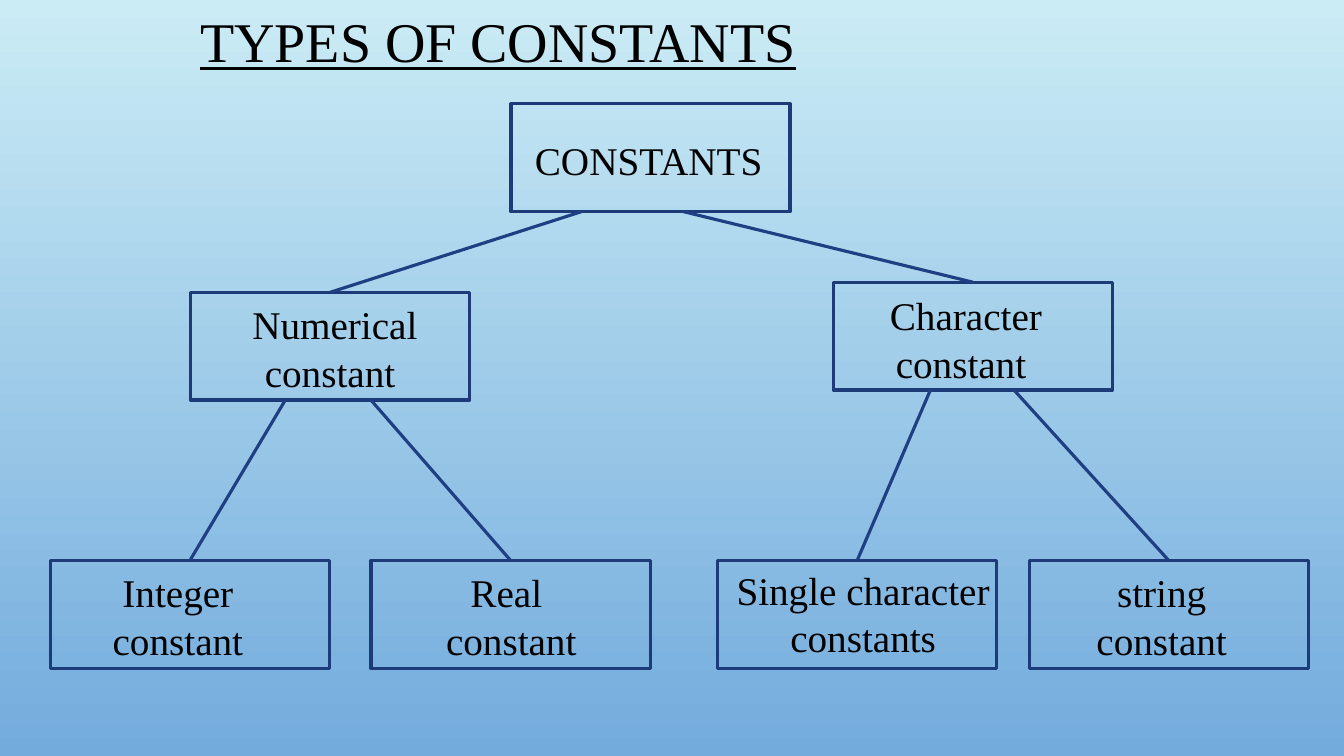
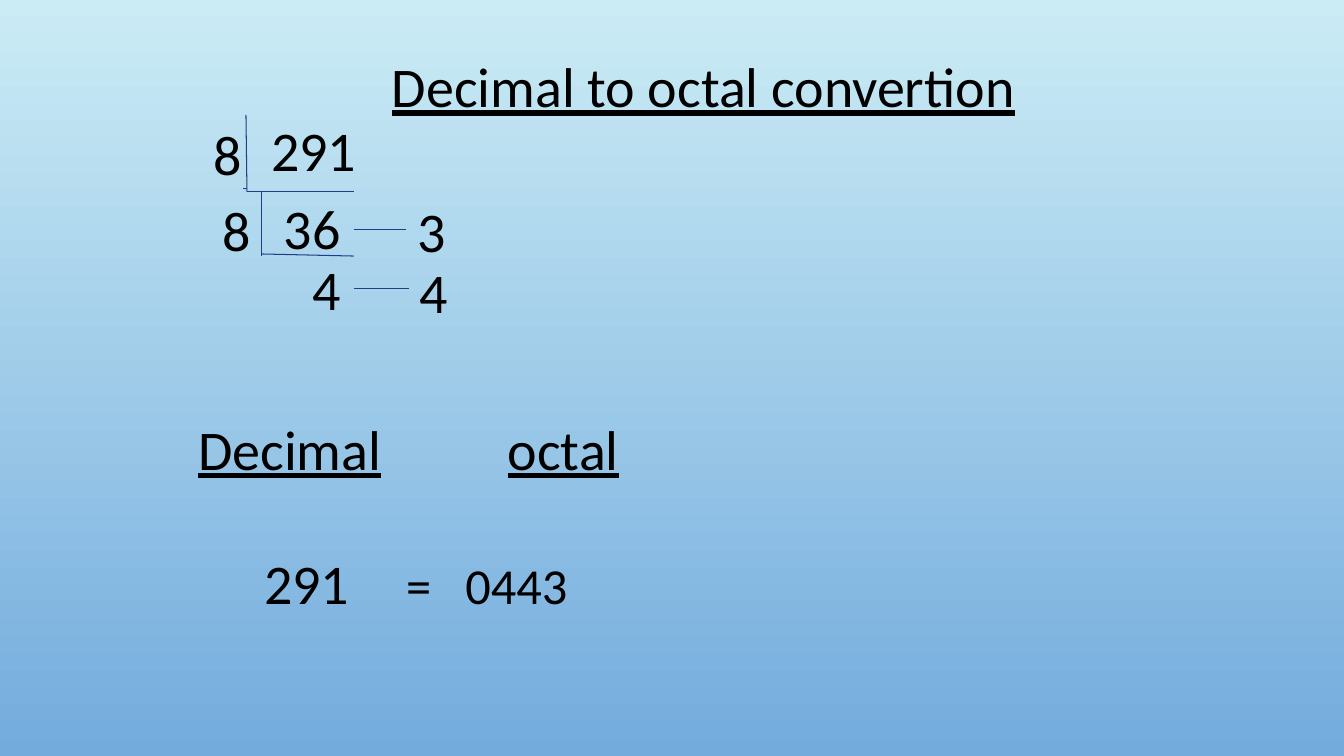
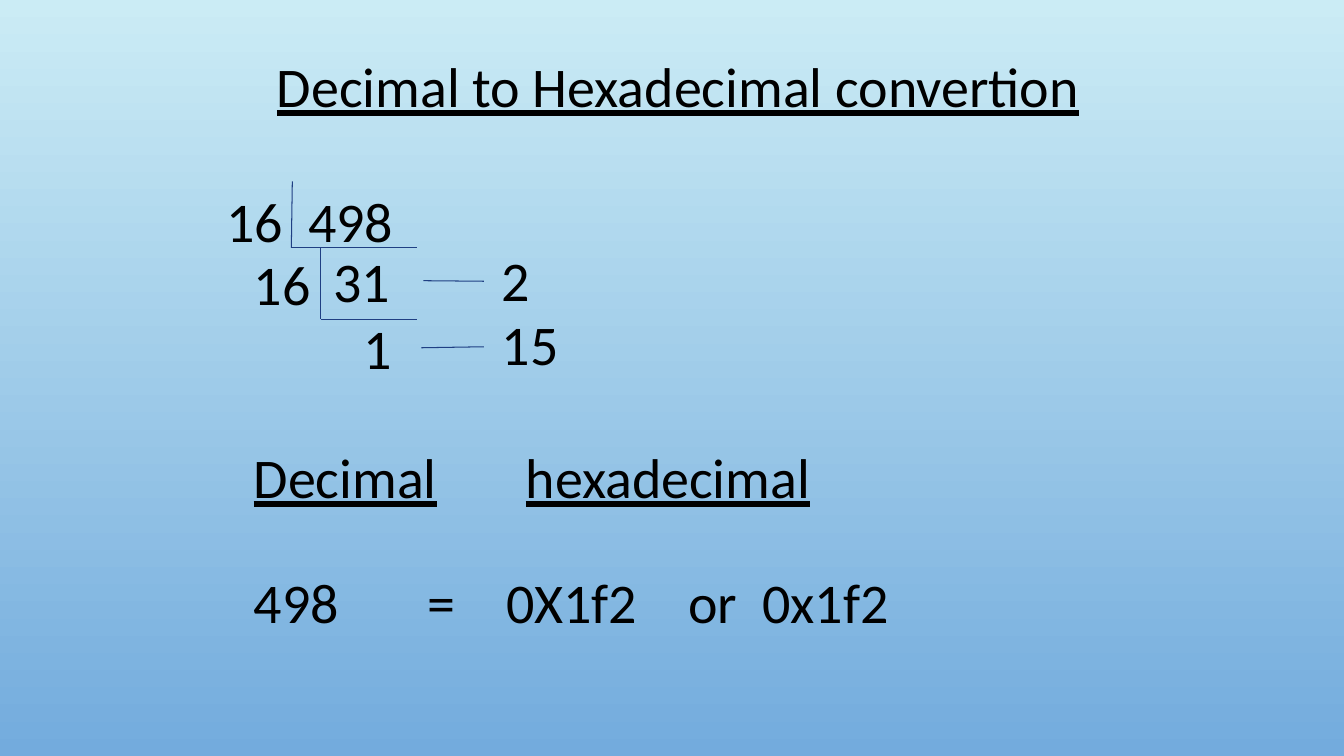
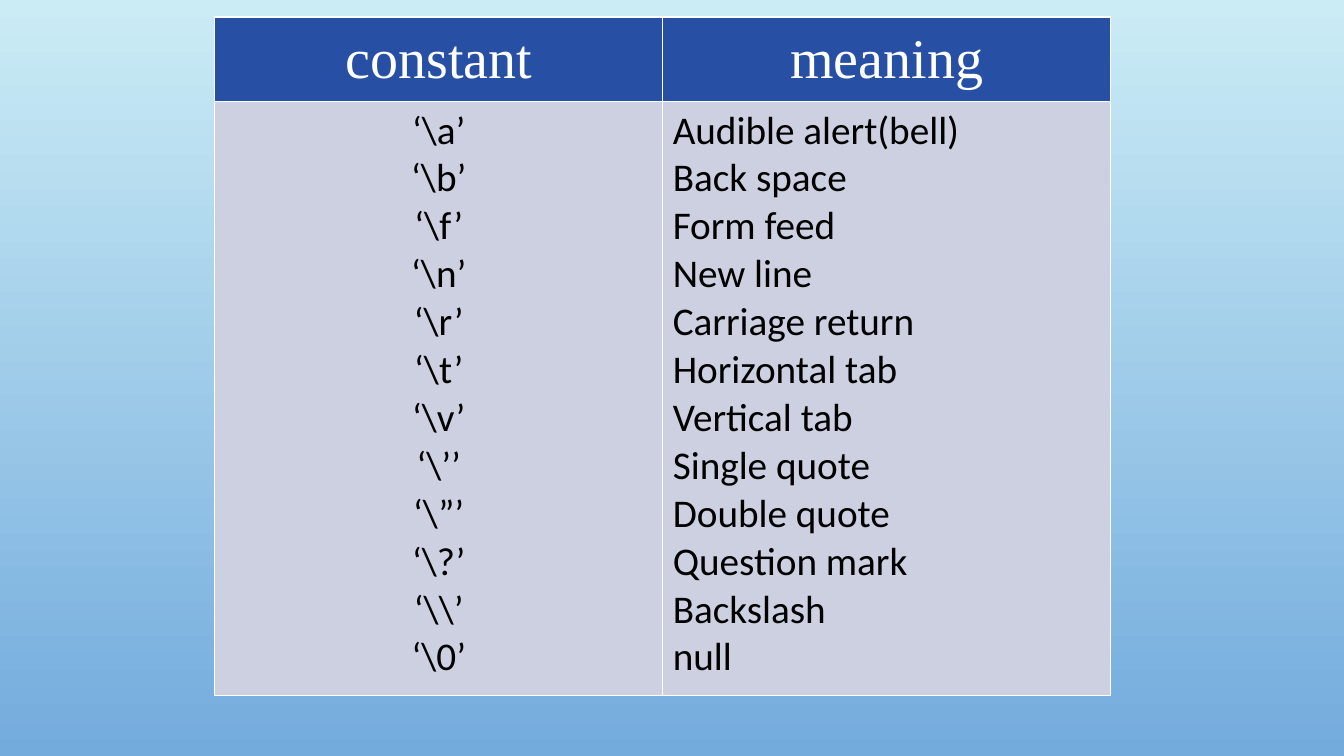
"""Build four slides on the types of constants in C."""
import pptx
import pptx.dml.color
import pptx.enum.dml
import pptx.enum.shapes
import pptx.enum.text
import pptx.util
from lxml import etree
from pptx.oxml.ns import qn

Pt = pptx.util.Pt
RGBColor = pptx.dml.color.RGBColor
Align = pptx.enum.text.PP_ALIGN

SKY_TOP = RGBColor(0xCB, 0xEC, 0xF5)
SKY_BOTTOM = RGBColor(0x73, 0xAB, 0xDD)
BOX_EDGE = RGBColor(0x1D, 0x3A, 0x79)
LINE = RGBColor(0x1F, 0x3F, 0x83)
HEADER = RGBColor(0x27, 0x4F, 0xA4)
BODY = RGBColor(0xCD, 0xD0, 0xE0)
BLACK = RGBColor(0, 0, 0)
WHITE = RGBColor(0xFF, 0xFF, 0xFF)

SANS = "Calibri"
SERIF = "Times New Roman"
SERIF_LEADING = 1.22
LARGE = 40
MEDIUM = 28
ROW_HEIGHT = 55.4

TREE_TITLE = ("TYPES OF CONSTANTS", 136, 0, 725)
NODE_WIDTH, NODE_HEIGHT = 199.4, 77
LEAF_TOP = 400.3
# name: left, top, text shift right, text shift down, (line, indent) pairs
NODES = {
    "root": (365, 74.2, -1.4, 1.5, [("CONSTANTS", 0)]),
    "numerical": (136.1, 208.8, 0, 1, [("Numerical", 7), ("constant", 0)]),
    "character": (595.4, 201.6, -8.6, 1.8, [("Character", 7), ("constant", 0)]),
    "integer": (36, LEAF_TOP, -8.6, 1, [("Integer", 0), ("constant", 0)]),
    "real": (265, LEAF_TOP, -3, 1, [("Real", 0), ("constant", 7)]),
    "single": (512.6, LEAF_TOP, 4.3, -1, [("Single character", 0), ("constants", 0)]),
    "string": (735.1, LEAF_TOP, -5, 1, [("string", 0), ("constant", 0)]),
}
BRANCHES = [
    ("root", 415.4, "numerical"),
    ("root", 488.2, "character"),
    ("numerical", 203.8, "integer"),
    ("numerical", 265, "real"),
    ("character", 664.6, "single"),
    ("character", 724.3, "string"),
]

CONVERSIONS = [
    {
        "title": ("Decimal to octal convertion", 272.9, 33.1, 467),
        "digits": [
            ("8", 145.4, 82.1, 27.4), ("291", 186.5, 79.2, 90),
            ("8", 151.9, 136.1, 27.4), ("36", 195.8, 134.6, 69),
            ("3", 290.9, 136.8, 27.4),
            ("4", 216, 178.6, 27.4), ("4", 292.3, 180.7, 27.4),
        ],
        "rules": [
            (175.7, 82.1, 176.4, 136.8), (176.4, 134.6, 173.5, 134.6),
            (176.4, 136.8, 252.7, 136.8), (252.7, 164.2, 290.2, 164.2),
            (186.5, 137.5, 186.5, 182.9), (186.5, 181.4, 252.7, 182.9),
            (252.7, 205.9, 292.3, 205.9),
        ],
        "headings": (["Decimal", "octal"], 134.6, 292.3, 468, [221.1]),
        "result": (["291", "=", "0443"], 181.6, 388.1, 432, [101.5, 143.8]),
        "answer_size": 36,
    },
    {
        "title": ("Decimal to Hexadecimal convertion", 190.8, 33.1, 648),
        "digits": [
            ("16", 154.8, 129.6, 62), ("498", 213.1, 129.6, 97),
            ("16", 174.2, 175, 62), ("31", 231.2, 172.8, 71),
            ("2", 351.4, 172.1, 62),
            ("1", 252.9, 220.3, 48), ("15", 351.4, 217.4, 62),
        ],
        "rules": [
            (208.8, 129.6, 208.1, 177.1), (208.1, 177.1, 298.1, 177.1),
            (229, 177.1, 229, 228.2), (229, 228.2, 298.1, 228.2),
            (302.4, 200.5, 345.6, 200.9), (301, 248.4, 345.6, 247.7),
        ],
        "headings": (["Decimal", "hexadecimal"], 174.2, 312.5, 698, [194.3]),
        "result": (["498", "=", "0X1f2", "or", "0x1f2"], 174.2, 401.8, 698,
                   [124.1, 180.2, 310.2, 363.3]),
        "answer_size": LARGE,
    },
]

TABLE_HEADER = ["constant", "meaning"]
ESCAPES = [
    ("‘\\a’", "Audible alert(bell)"),
    ("‘\\b’", "Back space"),
    ("‘\\f’", "Form feed"),
    ("‘\\n’", "New line"),
    ("‘\\r’", "Carriage return"),
    ("‘\\t’", "Horizontal tab"),
    ("‘\\v’", "Vertical tab"),
    ("‘\\’’", "Single quote"),
    ("‘\\”’", "Double quote"),
    ("‘\\?’", "Question mark"),
    ("‘\\\\’", "Backslash"),
    ("‘\\0’", "null"),
]
TABLE_PLACE = (153.4, 12.2, 640, 484.6)
TABLE_ROWS = (60.5, 424.1)


def write_text(frame, lines, size=LARGE, font=SANS, color=BLACK, underline=False,
               align=Align.LEFT, indents=(), tabs=(), sizes=()):
    """Fill a frame; a line is a string or a list of tab-separated parts."""
    frame.word_wrap = True
    for index, line in enumerate(lines):
        para = frame.paragraphs[0] if index == 0 else frame.add_paragraph()
        para.alignment = align
        if font == SERIF:
            para.line_spacing = Pt(size * SERIF_LEADING)
        properties = para._p.get_or_add_pPr()
        if indents and indents[index]:
            properties.set("marL", str(Pt(indents[index])))
        if tabs:
            stops = etree.SubElement(properties, qn("a:tabLst"))
            for stop in tabs:
                etree.SubElement(stops, qn("a:tab"), pos=str(Pt(stop)), algn="l")
        parts = [line] if isinstance(line, str) else line
        for number, part in enumerate(parts):
            for text in ([part] if number == 0 else ["\t", part]):
                span = para.add_run()
                span.text = text
                span.font.name = font
                span.font.size = Pt(sizes[number] if sizes else size)
                span.font.color.rgb = color
                span.font.underline = underline and text != "\t"


def add_text(page, text, left, top, width, **style):
    """Add a one-line text box."""
    box = page.shapes.add_textbox(Pt(left), Pt(top), Pt(width), Pt(ROW_HEIGHT))
    write_text(box.text_frame, [text], **style)


def add_line(page, start_x, start_y, end_x, end_y, width):
    """Add a straight line without shadow."""
    line = page.shapes.add_connector(
        pptx.enum.shapes.MSO_CONNECTOR.STRAIGHT,
        Pt(start_x), Pt(start_y), Pt(end_x), Pt(end_y))
    line.line.color.rgb = LINE
    line.line.width = Pt(width)
    etree.SubElement(line._element.spPr, qn("a:effectLst"))
    return line


def add_node(page, left, top, shift_x, shift_y, lines):
    """Add an outlined box whose centred text is nudged by its margins."""
    box = page.shapes.add_shape(pptx.enum.shapes.MSO_SHAPE.RECTANGLE,
                                Pt(left), Pt(top), Pt(NODE_WIDTH), Pt(NODE_HEIGHT))
    box.shadow.inherit = False
    box.fill.background()
    box.line.color.rgb = BOX_EDGE
    box.line.width = Pt(2.25)
    frame = box.text_frame
    frame.margin_left = Pt(max(2 * shift_x, 0))
    frame.margin_right = Pt(max(-2 * shift_x, 0))
    frame.margin_top = Pt(max(2 * shift_y, 0))
    frame.margin_bottom = Pt(max(-2 * shift_y, 0))
    frame.vertical_anchor = pptx.enum.text.MSO_ANCHOR.MIDDLE
    write_text(frame, [text for text, _ in lines], size=MEDIUM, font=SERIF,
               align=Align.CENTER, indents=[indent for _, indent in lines])
    return box


def build_tree(page):
    """Draw the tree of constant types."""
    add_text(page, *TREE_TITLE, font=SERIF, underline=True)
    boxes = {name: add_node(page, *node) for name, node in NODES.items()}
    for parent, start_x, child in BRANCHES:
        left, top = NODES[child][:2]
        start_y = NODES[parent][1] + NODE_HEIGHT
        branch = add_line(page, start_x, start_y, left + NODE_WIDTH / 2, top, 2.25)
        branch.end_connect(boxes[child], 0)


def build_conversion(page, conversion):
    """Draw a repeated division and its result."""
    add_text(page, *conversion["title"], underline=True)
    for digit in conversion["digits"]:
        add_text(page, *digit)
    for rule in conversion["rules"]:
        add_line(page, *rule, 0.75)
    *heading, tabs = conversion["headings"]
    add_text(page, *heading, tabs=tabs, underline=True)
    *result, tabs = conversion["result"]
    sizes = [LARGE] + [conversion["answer_size"]] * len(tabs)
    add_text(page, *result, tabs=tabs, sizes=sizes)


def style_cell(cell, fill):
    """Give a cell its fill and thin white borders."""
    properties = cell._tc.get_or_add_tcPr()
    for side in ("a:lnL", "a:lnR", "a:lnT", "a:lnB"):
        border = etree.SubElement(properties, qn(side), w=str(Pt(1)))
        solid = etree.SubElement(border, qn("a:solidFill"))
        etree.SubElement(solid, qn("a:srgbClr"), val=str(WHITE))
    cell.fill.solid()
    cell.fill.fore_color.rgb = fill


def build_table(page):
    """Draw the table of escape sequences."""
    table = page.shapes.add_table(2, 2, *map(Pt, TABLE_PLACE)).table
    for row, height in zip(table.rows, TABLE_ROWS):
        row.height = Pt(height)
    columns = zip(TABLE_HEADER, zip(*ESCAPES), (Align.CENTER, Align.LEFT))
    for index, (header, entries, align) in enumerate(columns):
        top, body = table.cell(0, index), table.cell(1, index)
        style_cell(top, HEADER)
        style_cell(body, BODY)
        write_text(top.text_frame, [header], font=SERIF, color=WHITE,
                   align=Align.CENTER)
        write_text(body.text_frame, entries, size=MEDIUM, align=align)


def main():
    """Build and save the deck."""
    deck = pptx.Presentation()
    deck.slide_width, deck.slide_height = Pt(960), Pt(540)
    sky = deck.slide_master.background.fill
    sky.gradient()
    sky.gradient_angle = 270
    for stop, color, position in zip(sky.gradient_stops, (SKY_TOP, SKY_BOTTOM), (0, 1)):
        stop.color.rgb = color
        stop.position = position
    blank = deck.slide_layouts[6]
    build_tree(deck.slides.add_slide(blank))
    for conversion in CONVERSIONS:
        build_conversion(deck.slides.add_slide(blank), conversion)
    build_table(deck.slides.add_slide(blank))
    deck.save("out.pptx")


if __name__ == "__main__":
    main()
